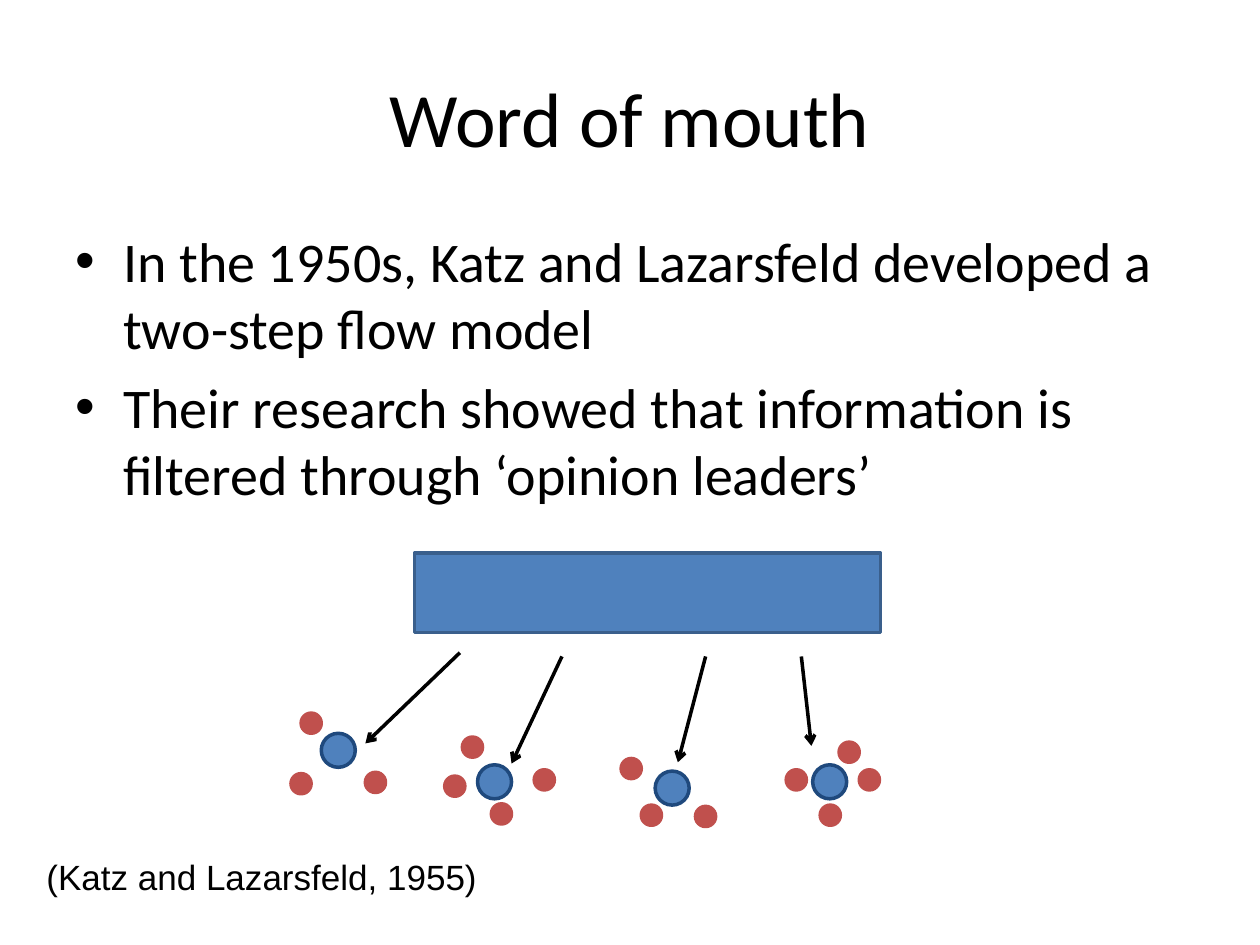
import pptx
import pptx.dml.color
import pptx.enum.shapes
import pptx.enum.text
import pptx.oxml.ns
import pptx.util
from lxml import etree

PX = 9144
THEME = {
    "text": pptx.dml.color.RGBColor.from_string("000000"),
    "source": pptx.dml.color.RGBColor.from_string("4F81BD"),
    "source_edge": pptx.dml.color.RGBColor.from_string("3A5F8C"),
    "leader_edge": pptx.dml.color.RGBColor.from_string("1F497D"),
    "follower": pptx.dml.color.RGBColor.from_string("C0504D"),
    "title_size": 44,
    "body_size": 32,
    "citation_size": 20,
    "line_width": pptx.util.Pt(2),
}
SHAPES = pptx.enum.shapes.MSO_SHAPE
ALIGN = pptx.enum.text.PP_ALIGN
ANCHOR = pptx.enum.text.MSO_ANCHOR
qualified = pptx.oxml.ns.qn

presentation = pptx.Presentation()
presentation.slide_width = 1000 * PX
presentation.slide_height = 750 * PX
slide = presentation.slides.add_slide(presentation.slide_layouts[6])


def add_text(lines, box, size, font="Calibri", align=ALIGN.LEFT,
             anchor=ANCHOR.TOP, wrap=True, bullet=None, indent=38):
    frame = slide.shapes.add_textbox(*(value * PX for value in box)).text_frame
    frame.word_wrap = wrap
    frame.vertical_anchor = anchor
    frame.text = "\n".join(lines)
    for paragraph in frame.paragraphs:
        paragraph.alignment = align
        paragraph.font.size = pptx.util.Pt(size)
        paragraph.font.name = font
        paragraph.font.color.rgb = THEME["text"]
        if bullet:
            paragraph.space_before = pptx.util.Pt(size * 0.2)
            properties = paragraph._p.get_or_add_pPr()
            properties.set("marL", str(indent * PX))
            properties.set("indent", str(-indent * PX))
            bullet_font = etree.Element(qualified("a:buFont"), typeface="Arial")
            bullet_mark = etree.Element(qualified("a:buChar"), char=bullet)
            spacing = properties.find(qualified("a:spcBef"))
            spacing.addnext(bullet_font)
            bullet_font.addnext(bullet_mark)


def add_filled_shape(kind, box, fill, edge):
    shape = slide.shapes.add_shape(kind, *(value * PX for value in box))
    shape.shadow.inherit = False
    shape.fill.solid()
    shape.fill.fore_color.rgb = fill
    shape.line.color.rgb = edge
    shape.line.width = THEME["line_width"]


add_text(["Word of mouth"], (50, 30, 900, 125), THEME["title_size"],
         align=ALIGN.CENTER, anchor=ANCHOR.MIDDLE)
add_text(["In the 1950s, Katz and Lazarsfeld developed a two-step flow model",
          "Their research showed that information is filtered through ‘opinion leaders’"],
         (50, 175, 900, 495), THEME["body_size"], bullet="•")

add_filled_shape(SHAPES.RECTANGLE, (329, 439, 370, 63), THEME["source"], THEME["source_edge"])

LEADER_SIZE = 27
FOLLOWER_SIZE = 16
clusters = [
    {"leader": (255, 582), "arrow": (365, 518, 290, 590),
     "followers": [(231, 614), (239, 566), (290, 613)]},
    {"leader": (379, 607), "arrow": (446, 521, 406, 606),
     "followers": [(367, 585), (424, 611), (353, 616), (390, 638)]},
    {"leader": (520, 612), "arrow": (560, 521, 538, 605),
     "followers": [(493, 602), (552, 640), (509, 639)]},
    {"leader": (645, 607), "arrow": (636, 521, 644, 592),
     "followers": [(666, 589), (651, 639), (624, 611), (682, 611)]},
]
for cluster in clusters:
    for position in cluster["followers"]:
        add_filled_shape(SHAPES.OVAL, (*position, FOLLOWER_SIZE, FOLLOWER_SIZE),
                         THEME["follower"], THEME["follower"])

    arrow = slide.shapes.add_connector(pptx.enum.shapes.MSO_CONNECTOR.STRAIGHT,
                                       *(value * PX for value in cluster["arrow"]))
    arrow.line.color.rgb = THEME["text"]
    arrow.line.width = THEME["line_width"]
    etree.SubElement(arrow.line._get_or_add_ln(), qualified("a:tailEnd"), type="arrow")
    etree.SubElement(arrow._element.spPr, qualified("a:effectLst"))

    add_filled_shape(SHAPES.OVAL, (*cluster["leader"], LEADER_SIZE, LEADER_SIZE),
                     THEME["source"], THEME["leader_edge"])

add_text(["(Katz and Lazarsfeld, 1955)"], (27, 674, 364, 44), THEME["citation_size"],
         font="Arial", wrap=False)

presentation.save("out.pptx")
